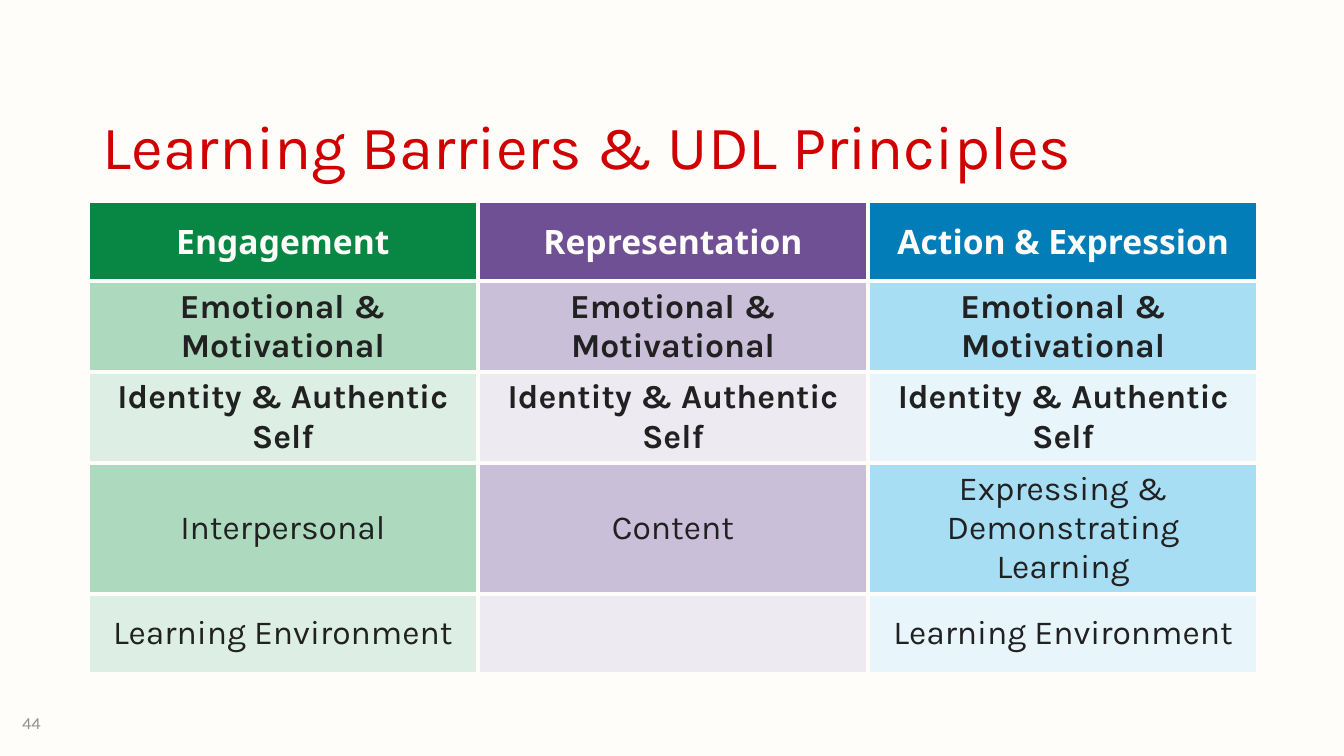
from dataclasses import dataclass

from lxml.etree import SubElement
from pptx import Presentation
from pptx.dml.color import RGBColor
from pptx.enum.text import MSO_ANCHOR, PP_ALIGN
from pptx.oxml.ns import qn
from pptx.slide import Slide
from pptx.table import _Cell
from pptx.text.text import _Paragraph
from pptx.util import Inches, Pt

COLORS = {
    "paper": "FEFDFA",
    "title": "D00000",
    "body": "212121",
    "page": "909090",
    "green": "078743",
    "green_mid": "ADDABE",
    "green_pale": "DDEFE4",
    "purple": "6F5094",
    "purple_mid": "CABFD9",
    "purple_pale": "EDEAF2",
    "blue": "037DB8",
    "blue_mid": "A8DEF3",
    "blue_pale": "E8F6FC",
}
BODY_FONT = "Karla"
HEADER_FONT = "Noto Sans"
BORDER_POINTS = 3
COLUMN_WIDTH = 3.87
ROW_HEIGHTS = [0.79, 0.79, 0.79, 1.02, 0.79]
SHARED_BARRIERS = ["Emotional & Motivational", "Identity & Authentic Self"]


@dataclass
class Principle:
    name: str
    hue: str
    own_barriers: list[str]


@dataclass
class Label:
    text: str
    left: float
    top: float
    width: float
    height: float
    size: int
    color: str
    anchor: MSO_ANCHOR


PRINCIPLES = [
    Principle("Engagement", "green", ["Interpersonal", "Learning Environment"]),
    Principle("Representation", "purple", ["Content", ""]),
    Principle("Action & Expression", "blue",
              ["Expressing & Demonstrating Learning", "Learning Environment"]),
]
LABELS = [
    Label("Learning Barriers & UDL Principles", 0.92, 0.4, 11.5, 1.45, 44,
          "title", MSO_ANCHOR.BOTTOM),
    Label("44", 0.12, 6.97, 0.79, 0.4, 12, "page", MSO_ANCHOR.MIDDLE),
]


def rgb(name: str) -> RGBColor:
    return RGBColor.from_string(COLORS[name])


def style(paragraph: _Paragraph, face: str, size: int, color: str,
          bold: bool = False) -> None:
    paragraph.font.name = face
    paragraph.font.size = Pt(size)
    paragraph.font.bold = bold
    paragraph.font.color.rgb = rgb(color)


def add_label(slide: Slide, label: Label) -> None:
    box = slide.shapes.add_textbox(Inches(label.left), Inches(label.top),
                                   Inches(label.width), Inches(label.height))
    frame = box.text_frame
    frame.word_wrap = True
    frame.vertical_anchor = label.anchor
    frame.text = label.text
    style(frame.paragraphs[0], BODY_FONT, label.size, label.color)


def add_borders(cell: _Cell) -> None:
    properties = cell._tc.get_or_add_tcPr()
    for side in ("a:lnL", "a:lnR", "a:lnT", "a:lnB"):
        line = SubElement(properties, qn(side), w=str(Pt(BORDER_POINTS)))
        fill = SubElement(line, qn("a:solidFill"))
        SubElement(fill, qn("a:srgbClr"), val=COLORS["paper"])


def fill_cell(cell: _Cell, text: str, fill: str, face: str, color: str,
              bold: bool) -> None:
    add_borders(cell)
    cell.fill.solid()
    cell.fill.fore_color.rgb = rgb(fill)
    cell.vertical_anchor = MSO_ANCHOR.MIDDLE
    cell.text = text
    paragraph = cell.text_frame.paragraphs[0]
    paragraph.alignment = PP_ALIGN.CENTER
    style(paragraph, face, 24, color, bold)


def add_principles_table(slide: Slide) -> None:
    table = slide.shapes.add_table(
        len(ROW_HEIGHTS), len(PRINCIPLES), Inches(0.87), Inches(2),
        Inches(COLUMN_WIDTH * len(PRINCIPLES)), Inches(sum(ROW_HEIGHTS))).table
    for row, height in zip(table.rows, ROW_HEIGHTS):
        row.height = Inches(height)
    for column, principle in enumerate(PRINCIPLES):
        table.columns[column].width = Inches(COLUMN_WIDTH)
        fill_cell(table.cell(0, column), principle.name, principle.hue,
                  HEADER_FONT, "paper", True)
        # Barriers alternate tints; those shared by all principles are bold
        barriers = SHARED_BARRIERS + principle.own_barriers
        for row, barrier in enumerate(barriers, start=1):
            tint = "mid" if row % 2 else "pale"
            fill_cell(table.cell(row, column), barrier, f"{principle.hue}_{tint}",
                      BODY_FONT, "body", row <= len(SHARED_BARRIERS))


def main() -> None:
    deck = Presentation()
    deck.slide_width, deck.slide_height = Inches(13.33), Inches(7.5)
    slide = deck.slides.add_slide(deck.slide_layouts[6])

    # Background
    slide.background.fill.solid()
    slide.background.fill.fore_color.rgb = rgb("paper")

    # Title and page number
    for label in LABELS:
        add_label(slide, label)

    # Barriers by principle
    add_principles_table(slide)

    deck.save("out.pptx")


if __name__ == "__main__":
    main()
